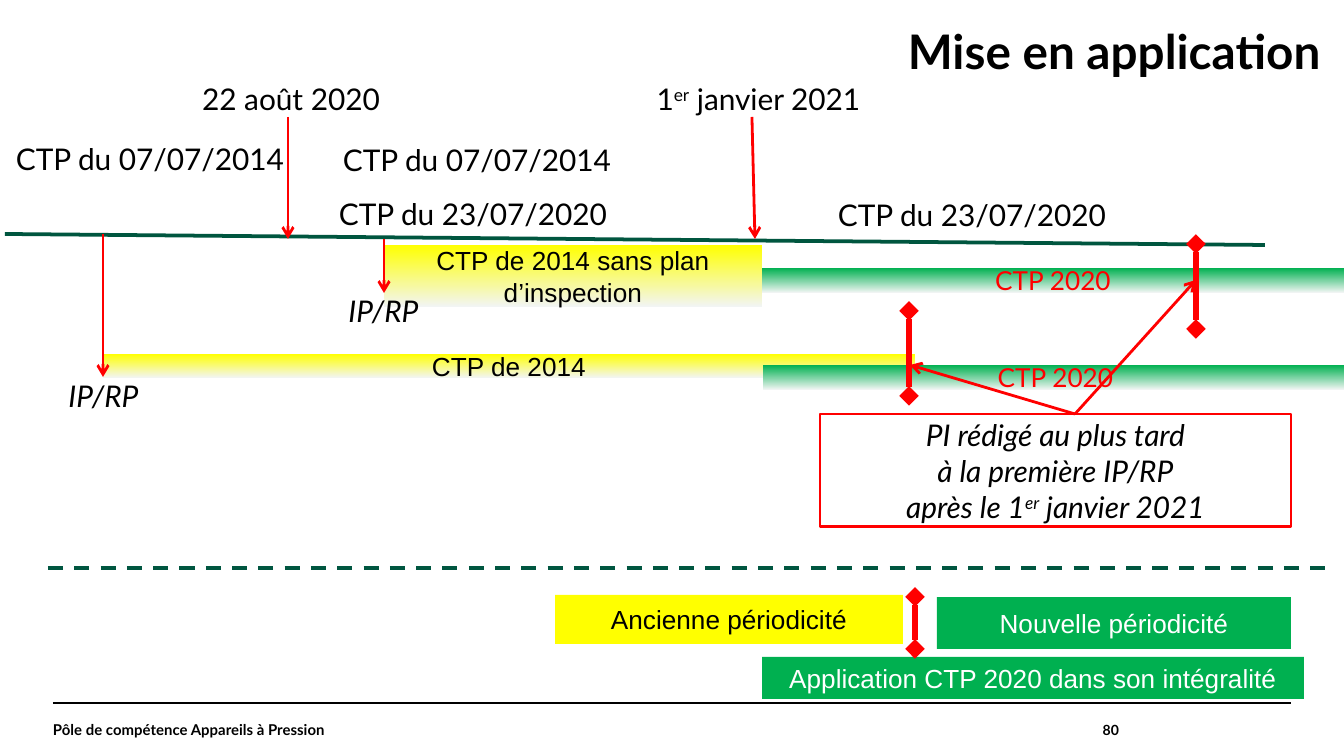
"""Build the timeline slide on when the CTP 2014 and CTP 2020 rules apply."""
import pptx
import pptx.dml.color
import pptx.enum.dml
import pptx.enum.shapes
import pptx.enum.text
import pptx.oxml.ns
import pptx.util
import lxml.etree

PX = 914400 / 134.4
COLORS = {
    "black": "000000",
    "white": "FFFFFF",
    "red": "FF0000",
    "yellow": "FFFF00",
    "green": "00B050",
    "pale": "F2F5F4",
    "timeline": "00563F",
    "divider": "005640",
}
ALIGN = pptx.enum.text.PP_ALIGN
ANCHOR = pptx.enum.text.MSO_ANCHOR
RGB = pptx.dml.color.RGBColor.from_string


def write_text(shape, text, size=16, font="Lato", color="black", bold=False, italic=False,
               align=ALIGN.LEFT, anchor=ANCHOR.MIDDLE, inset=(0, 0), spacing=None):
    """Fill a shape with lines of text; parts between ^ marks are superscript."""
    frame = shape.text_frame
    frame.word_wrap = True
    frame.auto_size = pptx.enum.text.MSO_AUTO_SIZE.NONE
    frame.vertical_anchor = anchor
    frame.margin_left = frame.margin_right = round(inset[0] * PX)
    frame.margin_top = frame.margin_bottom = round(inset[1] * PX)
    for index, line in enumerate(text.split("\n")):
        paragraph = frame.add_paragraph() if index else frame.paragraphs[0]
        paragraph.alignment = align
        if spacing:
            paragraph.line_spacing = spacing
        for part_index, part in enumerate(line.split("^")):
            run = paragraph.add_run()
            run.text = part
            run.font.size = pptx.util.Pt(size)
            run.font.name = font
            run.font.bold = bold
            run.font.italic = italic
            run.font.color.rgb = RGB(COLORS[color])
            if part_index % 2:
                run.font._element.set("baseline", "30000")


def add_line(points, color, width, head=None, tail=None, dash=None):
    """Draw a straight connector with optional line ends."""
    connector = slide.shapes.add_connector(
        pptx.enum.shapes.MSO_CONNECTOR.STRAIGHT, *[round(value * PX) for value in points])
    connector.line.color.rgb = RGB(COLORS[color])
    connector.line.width = pptx.util.Pt(width)
    if dash:
        connector.line.dash_style = dash
    outline = connector.line._get_or_add_ln()
    for tag, kind in (("a:headEnd", head), ("a:tailEnd", tail)):
        if kind:
            lxml.etree.SubElement(outline, pptx.oxml.ns.qn(tag), type=kind)
    lxml.etree.SubElement(connector._element.spPr, pptx.oxml.ns.qn("a:effectLst"))


presentation = pptx.Presentation()
presentation.slide_width = round(1344 * PX)
presentation.slide_height = round(756 * PX)
slide = presentation.slides.add_slide(presentation.slide_layouts[5])

title = slide.shapes.title
title.left, title.top, title.width, title.height = [round(v * PX) for v in (185, 28, 1136, 106)]
write_text(title, "Mise en application", size=25.5, bold=True, align=ALIGN.RIGHT,
           anchor=ANCHOR.TOP, spacing=0.9)

bars = [
    ("CTP de 2014 sans plan d’inspection", (384, 245, 378, 62), "yellow", True, "Arial", "black"),
    ("CTP de 2014", (103, 354, 812, 24), "yellow", True, "Arial", "black"),
    ("CTP 2020", (762, 268, 582, 25), "green", True, "Lato", "red"),
    ("CTP 2020", (763, 365, 585, 25), "green", True, "Lato", "red"),
    ("Ancienne périodicité", (555, 595, 348, 49), "yellow", False, "Arial", "black"),
    ("Nouvelle périodicité", (937, 597, 354, 52), "green", False, "Arial", "white"),
    ("Application CTP 2020 dans son intégralité", (762, 657, 542, 42), "green", False,
     "Arial", "white"),
]
for text, box, fill, fades, font, color in bars:
    bar = slide.shapes.add_shape(
        pptx.enum.shapes.MSO_SHAPE.RECTANGLE, *[round(value * PX) for value in box])
    bar.shadow.inherit = False
    bar.line.fill.background()
    if fades:
        bar.fill.gradient()
        bar.fill.gradient_angle = 270
        for stop, stop_color in zip(bar.fill.gradient_stops, (fill, "pale")):
            stop.color.rgb = RGB(COLORS[stop_color])
    else:
        bar.fill.solid()
        bar.fill.fore_color.rgb = RGB(COLORS[fill])
    write_text(bar, text, size=14, font=font, color=color, align=ALIGN.CENTER, inset=(13, 7))

date = {"align": ALIGN.CENTER}
milestone = {"align": ALIGN.CENTER, "italic": True}
footer = {"size": 8, "bold": True}
page_number = {"size": 7.5, "bold": True, "align": ALIGN.RIGHT}
labels = [
    ("Pôle de compétence Appareils à Pression", (53, 703, 868, 53), footer),
    ("80", (921, 703, 198, 53), page_number),
    ("22 août 2020", (189, 81, 204, 36), date),
    ("1^er^ janvier 2021", (642, 81, 233, 36), date),
    ("CTP du 07/07/2014", (16, 141, 407, 36), {}),
    ("CTP du 07/07/2014", (343, 142, 407, 36), {}),
    ("CTP du 23/07/2020", (339, 196, 407, 36), {}),
    ("CTP du 23/07/2020", (838, 197, 407, 36), {}),
    ("IP/RP", (50, 378, 107, 36), milestone),
    ("IP/RP", (330, 293, 107, 36), milestone),
]
for text, box, style in labels:
    label = slide.shapes.add_textbox(*[round(value * PX) for value in box])
    write_text(label, text, **style)

note = slide.shapes.add_shape(
    pptx.enum.shapes.MSO_SHAPE.RECTANGLE, *[round(value * PX) for value in (820, 414, 471, 113)])
note.shadow.inherit = False
note.fill.background()
note.line.color.rgb = RGB(COLORS["red"])
note.line.width = pptx.util.Pt(1.5)
write_text(note, "PI rédigé au plus tard\nà la première IP/RP\naprès le 1^er^ janvier 2021",
           italic=True, align=ALIGN.CENTER)

add_line((53, 703, 1291, 703), "black", 0.79)
add_line((5, 234, 1265, 245), "timeline", 2)
add_line((48, 568, 1328, 568), "divider", 2, dash=pptx.enum.dml.MSO_LINE.DASH)

arrows = [
    (288, 117, 288, 239),
    (752, 117, 755, 239),
    (103, 234, 103, 377),
    (384, 239, 384, 293),
    (1075, 414, 910, 365),
    (1075, 414, 1196, 280),
]
for points in arrows:
    add_line(points, "red", 1.5, tail="arrow")

for x, top, bottom in [(909, 311, 396), (1196, 244, 329), (915, 597, 649)]:
    add_line((x, top, x, bottom), "red", 3.5, head="diamond", tail="diamond")

presentation.save("out.pptx")
